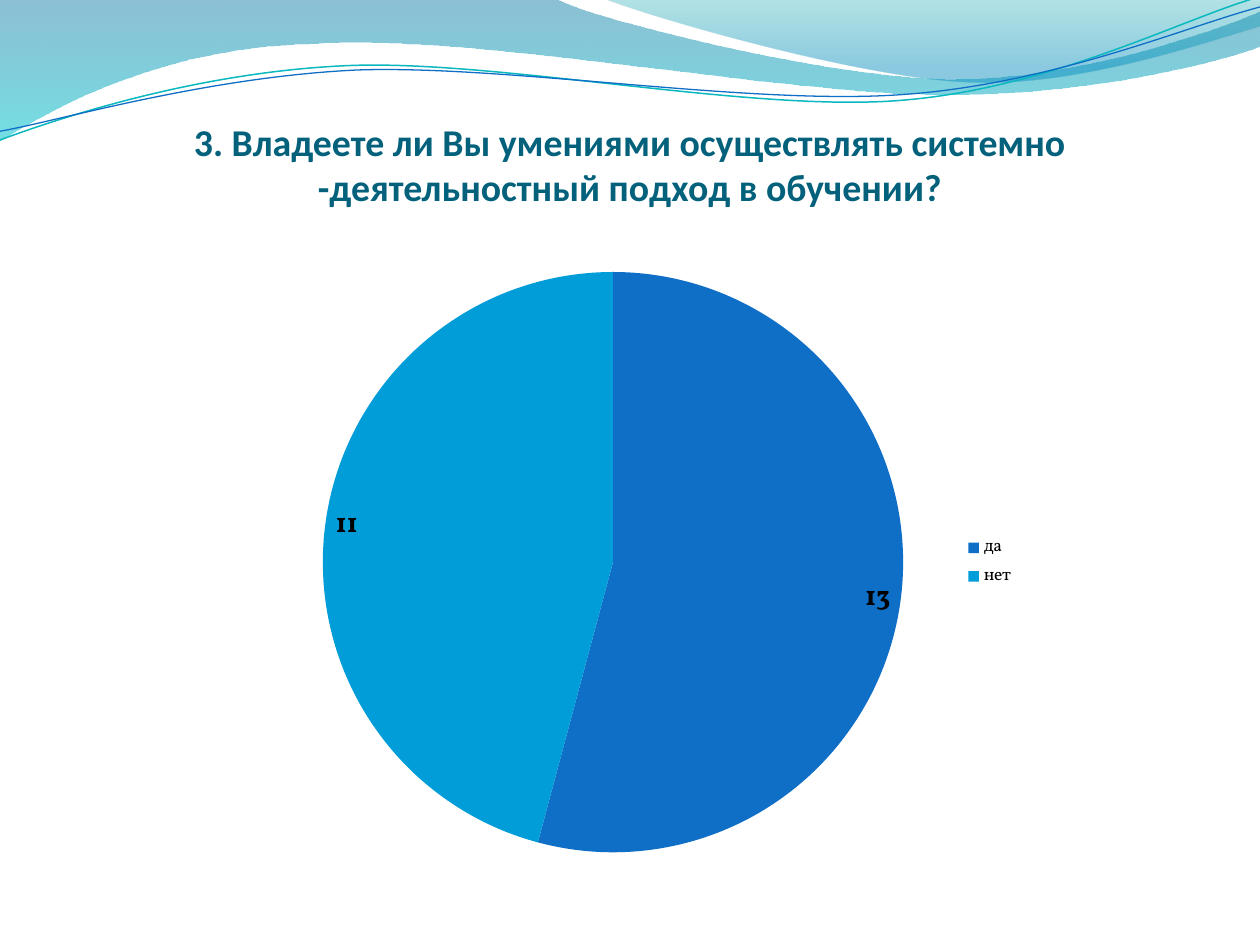
from lxml import etree
from pptx import Presentation
from pptx.chart.data import CategoryChartData
from pptx.dml.color import RGBColor
from pptx.enum.chart import XL_CHART_TYPE, XL_LABEL_POSITION, XL_LEGEND_POSITION
from pptx.enum.text import MSO_ANCHOR, PP_ALIGN
from pptx.oxml.ns import qn
from pptx.util import Pt

PIE = XL_CHART_TYPE.PIE
RIGHT = XL_LEGEND_POSITION.RIGHT
BEST = XL_LABEL_POSITION.BEST_FIT
BOTTOM = MSO_ANCHOR.BOTTOM
CENTER = PP_ALIGN.CENTER

COLORS = {
    "title": "04617B", "text": "000000",
    "yes": "0F6FC6", "no": "009DD9", "teal": "0AB8BF",
    "deep": "0074A1", "aqua": "00C6CF", "mint": "00A1A9", "sky": "008BBF",
}

WAVE = [(0, 0), (317, -1), (343, 12, 478, 45, 546, 45),
        (614, 45, 690, 19, 720, 6.5), (721, 26),
        (708, 32, 626, 55, 537, 54), (447, 54, 275, 20, 185, 24.5),
        (93, 26, 33, 60, -1, 81)]
SHEEN = [(345, -1), (366, 8, 491, 45, 554, 47),
         (616, 50, 692, 23, 720, 15), (720, 0)]
UPPER = [(0, 80), (35, 67, 114, 41, 199, 37.5),
         (284, 34, 427, 64, 513, 57.5), (600, 51, 675, 11, 718.5, -1.5)]
LOWER = [(0, 75), (34, 69, 118, 44, 204, 40),
         (290, 37, 430, 60.5, 516, 54), (602, 48, 678, 15, 720, 4)]


def color(name):
    return RGBColor.from_string(COLORS[name])


def bend(shape, steps):
    lines = list(shape.element.spPr.iter(qn("a:lnTo")))
    for line, step in zip(lines, steps[1:]):
        if len(step) == 2:
            continue
        curve = etree.Element(qn("a:cubicBezTo"))
        for x, y in zip(step[::2], step[1::2]):
            knot = etree.SubElement(curve, qn("a:pt"))
            knot.set("x", str(Pt(x) - shape.left))
            knot.set("y", str(Pt(y) - shape.top))
        line.getparent().replace(line, curve)


def add_path(slide, steps, close):
    start, *rest = [(Pt(step[-2]), Pt(step[-1])) for step in steps]
    pen = slide.shapes.build_freeform(*start)
    pen.add_line_segments(rest, close=close)
    shape = pen.convert_to_shape()
    bend(shape, steps)
    shape.shadow.inherit = False
    return shape


def add_band(slide, steps, stops):
    shape = add_path(slide, steps, True)
    shape.line.fill.background()
    shape.fill.gradient()
    shape.fill.gradient_angle = 270
    for stop, (place, name, alpha) in zip(shape.fill.gradient_stops, stops):
        stop.position = place
        stop.color.rgb = color(name)
    tints = shape.element.spPr.iter(qn("a:srgbClr"))
    for tint, (place, name, alpha) in zip(tints, stops):
        etree.SubElement(tint, qn("a:alpha")).set("val", str(alpha * 1000))


def add_curve(slide, steps, name, width):
    shape = add_path(slide, steps, False)
    shape.fill.background()
    shape.line.color.rgb = color(name)
    shape.line.width = Pt(width)


def set_title(slide, text):
    title = slide.shapes.title
    title.left, title.top = Pt(36), Pt(71.3)
    title.width, title.height = Pt(648), Pt(74)
    frame = title.text_frame
    frame.word_wrap = True
    frame.vertical_anchor = BOTTOM
    frame.margin_left = frame.margin_right = Pt(0)
    frame.margin_top, frame.margin_bottom = Pt(3.6), Pt(25.8)
    para = frame.paragraphs[0]
    para.alignment = CENTER
    run = para.add_run()
    run.text = text
    font = run.font
    font.name, font.size, font.bold = "Calibri", Pt(21.6), True
    font.color.rgb = color("title")


def style(font, size, bold):
    font.name, font.size, font.bold = "Vollkorn", Pt(size), bold
    font.color.rgb = color("text")


def add_pie(slide, slices):
    data = CategoryChartData()
    data.categories = [label for label, value, name in slices]
    data.add_series("Series 1", [value for label, value, name in slices])
    chart = slide.shapes.add_chart(
        PIE, Pt(150.5), Pt(145.5), Pt(436.5), Pt(351.5), data).chart
    style(chart.font, 10, False)
    chart.has_title = False
    chart.has_legend = True
    chart.legend.position = RIGHT
    chart.legend.include_in_layout = False
    plot = chart.plots[0]
    plot.vary_by_categories = True
    plot.has_data_labels = True
    labels = plot.data_labels
    labels.show_value = True
    labels.show_percentage = False
    labels.position = BEST
    style(labels.font, 16, True)
    for i, (label, value, name) in enumerate(slices):
        form = plot.series[0].points[i].format
        form.fill.solid()
        form.fill.fore_color.rgb = color(name)
        form.line.fill.background()


def main():
    deck = Presentation()
    deck.slide_width, deck.slide_height = Pt(720), Pt(540)
    slide = deck.slides.add_slide(deck.slide_layouts[5])
    add_band(slide, WAVE, [(0, "deep", 45), (1, "aqua", 55)])
    add_band(slide, SHEEN, [(0, "mint", 30), (0.8, "sky", 45)])
    add_curve(slide, UPPER, "teal", 0.85)
    add_curve(slide, LOWER, "yes", 0.75)
    set_title(slide, "3. Владеете ли Вы умениями осуществлять системно "
                     "-деятельностный подход в обучении?")
    add_pie(slide, [("да", 13, "yes"), ("нет", 11, "no")])
    deck.save("out.pptx")


if __name__ == "__main__":
    main()
